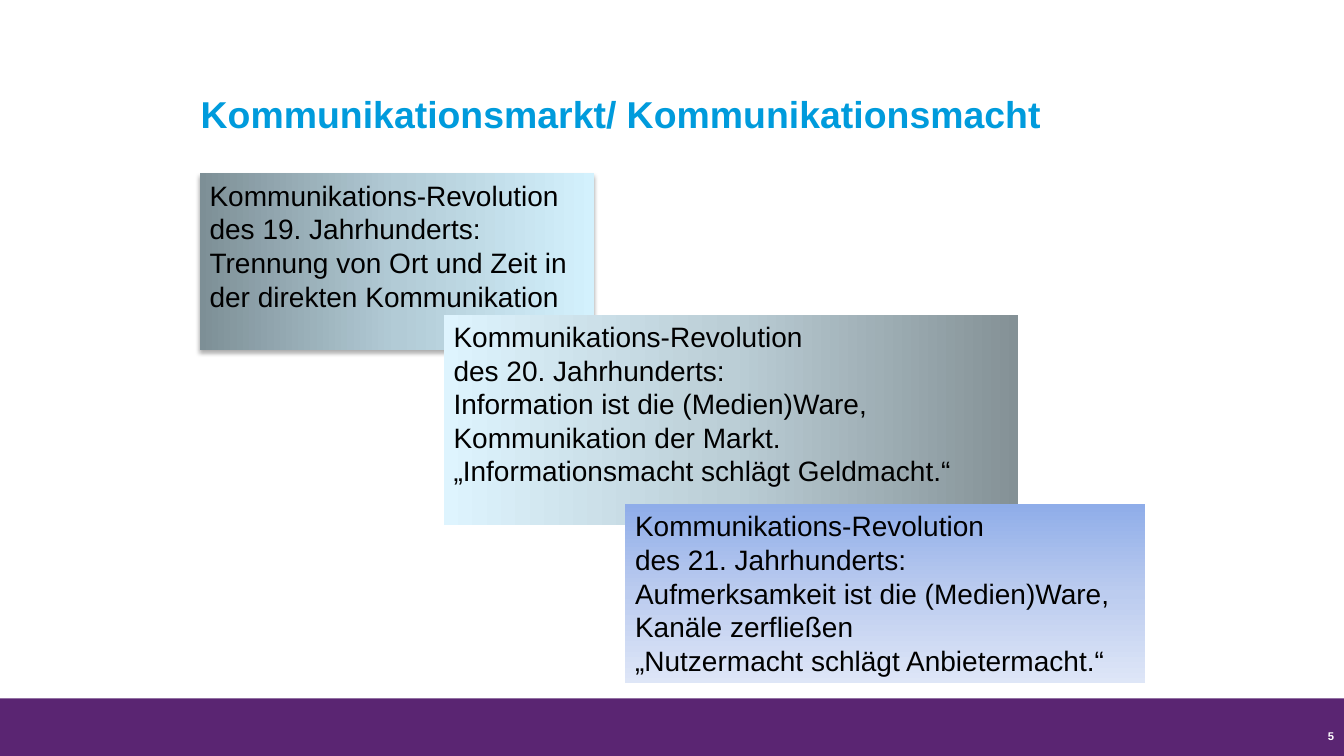
from lxml import etree
from pptx import Presentation
from pptx.dml.color import RGBColor
from pptx.enum.shapes import MSO_SHAPE
from pptx.enum.text import MSO_ANCHOR, MSO_AUTO_SIZE, PP_ALIGN
from pptx.oxml import parse_xml
from pptx.oxml.ns import nsdecls
from pptx.util import Inches, Pt

RECT = MSO_SHAPE.RECTANGLE
TOP, BOTTOM = MSO_ANCHOR.TOP, MSO_ANCHOR.BOTTOM
LEFT, RIGHT = PP_ALIGN.LEFT, PP_ALIGN.RIGHT
NO_FIT = MSO_AUTO_SIZE.NONE
BLACK = RGBColor(0, 0, 0)
WHITE = RGBColor(255, 255, 255)
CYAN = RGBColor(0x00, 0x9B, 0xDC)
PURPLE = RGBColor(0x5A, 0x25, 0x72)
GREY = [RGBColor(0x7D, 0x8F, 0x96), RGBColor(0xB2, 0xCB, 0xD6), RGBColor(0xD3, 0xF1, 0xFD)]
STEEL = [RGBColor(0x84, 0x91, 0x96), RGBColor(0xBB, 0xCE, 0xD6), RGBColor(0xDE, 0xF4, 0xFE)]
BLUE = [RGBColor(0x8F, 0xAD, 0xE9), RGBColor(0xBC, 0xCC, 0xEF), RGBColor(0xDE, 0xE6, 0xF7)]

# Content
TITLE = "Kommunikationsmarkt/ Kommunikationsmacht"
PAGE = "5"
HEAD = "Kommunikations-Revolution\ndes {}. Jahrhunderts:"
# century, further paragraphs, box (left, top, width, height), colours, angle
STEPS = [
    (19, ["Trennung von Ort und Zeit in der direkten Kommunikation"],
     (1.98, 1.72, 3.91, 1.75), GREY, 0),
    (20, ["Information ist die (Medien)Ware,\nKommunikation der Markt.",
          "„Informationsmacht schlägt Geldmacht.“"],
     (4.4, 3.12, 5.7, 2.09), STEEL, 180),
    (21, ["Aufmerksamkeit ist die (Medien)Ware,\nKanäle zerfließen",
          "„Nutzermacht schlägt Anbietermacht.“"],
     (6.2, 5, 5.16, 1.78), BLUE, 90),
]
WIDE, HIGH, BAND = 13.33, 7.5, 0.57


def place(box):
    return [Inches(n) for n in box]


def write(frame, texts, size, color, bold=False, align=LEFT, pitch=None):
    for i, text in enumerate(texts):
        par = frame.paragraphs[0] if i == 0 else frame.add_paragraph()
        par.text = text
        par.alignment = align
        if pitch:
            par.line_spacing = Pt(pitch)
        font = par.font
        font.name, font.size, font.bold = "Arial", Pt(size), bold
        font.color.rgb = color


def add_rect(box):
    rect = slide.shapes.add_shape(RECT, *place(box))
    rect.shadow.inherit = False
    rect.line.fill.background()
    return rect


def shade(rect, colors, angle):
    stops = "".join(f'<a:gs pos="{i * 50000}"><a:srgbClr val="{color}"/></a:gs>'
                    for i, color in enumerate(colors))
    grad = parse_xml(f'<a:gradFill {nsdecls("a")} rotWithShape="1"><a:gsLst>{stops}'
                     f'</a:gsLst><a:lin ang="{angle * 60000}" scaled="0"/></a:gradFill>')
    rect.fill.background()
    props = rect.element.spPr
    props.replace(props.find("{*}noFill"), grad)


def cast(rect):
    effects = rect.element.spPr.find("{*}effectLst")
    shadow = etree.fromstring(
        f'<a:outerShdw {nsdecls("a")} blurRad="{Pt(3.5)}" dist="{Pt(2.2)}" dir="5400000" '
        'rotWithShape="0"><a:srgbClr val="000000"><a:alpha val="32000"/>'
        '</a:srgbClr></a:outerShdw>')
    effects.append(shadow)


deck = Presentation()
deck.slide_width, deck.slide_height = Inches(WIDE), Inches(HIGH)
slide = deck.slides.add_slide(deck.slide_layouts[5])

# Footer band
band = add_rect((0, HIGH - BAND, WIDE, BAND))
band.fill.solid()
band.fill.fore_color.rgb = PURPLE

# Title
title = slide.shapes.title
title.left, title.top, title.width, title.height = place((1.89, 0.89, 9.48, 0.88))
title.text_frame.vertical_anchor = TOP
title.text_frame.auto_size = NO_FIT
write(title.text_frame, [TITLE], 26.7, CYAN, True, pitch=29.3)

# Page number
page = slide.shapes.add_textbox(*place((WIDE - 0.7, 7.14, 0.7, 0.28))).text_frame
page.word_wrap = True
page.vertical_anchor = BOTTOM
write(page, [PAGE], 8, WHITE, True, RIGHT)

# Overlapping steps, the first one with a shadow
for i, (age, lines, box, colors, angle) in enumerate(STEPS):
    step = add_rect(box)
    shade(step, colors, angle)
    if i == 0:
        cast(step)
    frame = step.text_frame
    frame.word_wrap = True
    frame.vertical_anchor = TOP
    write(frame, [HEAD.format(age)] + lines, 20, BLACK, pitch=24)

deck.save("out.pptx")
